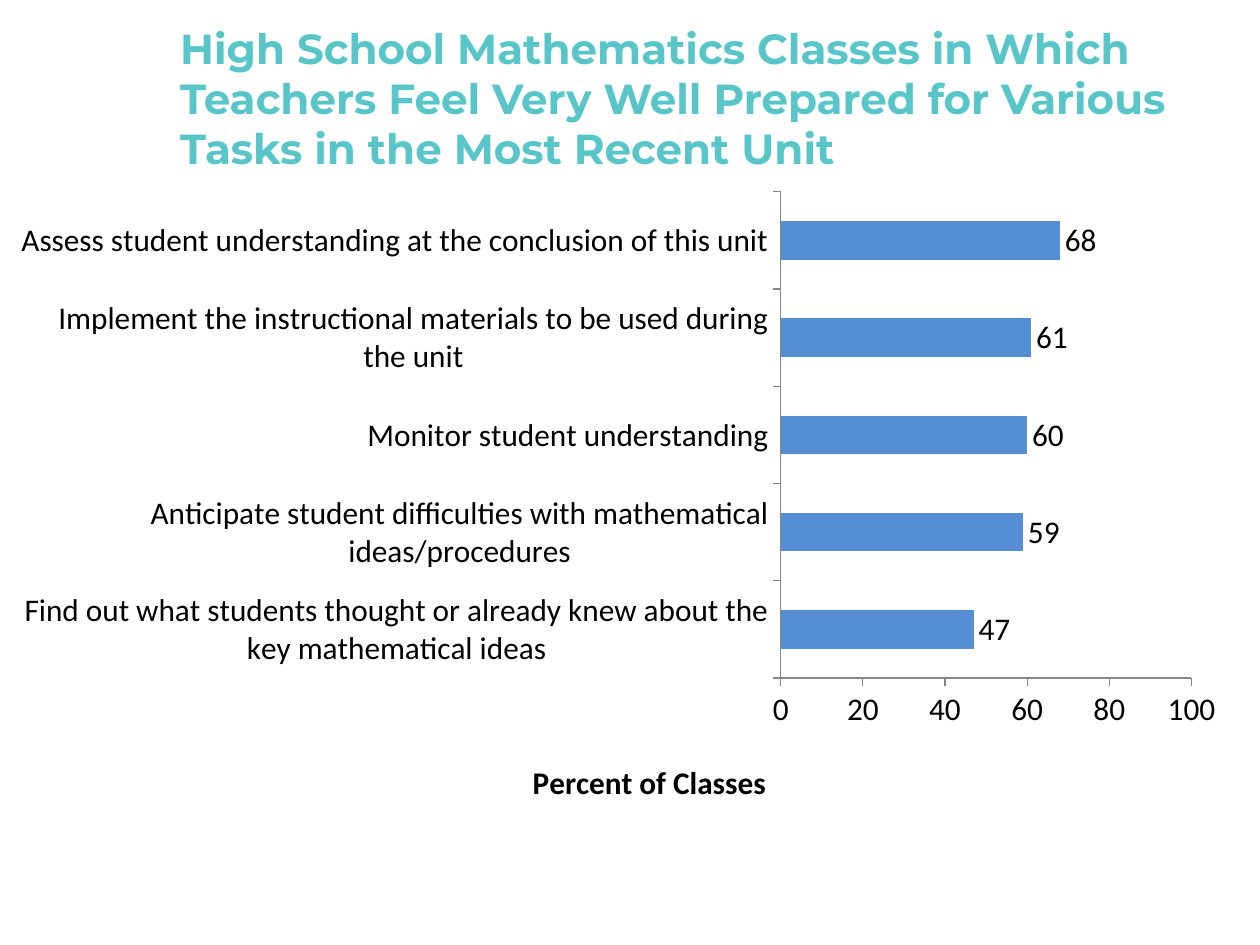
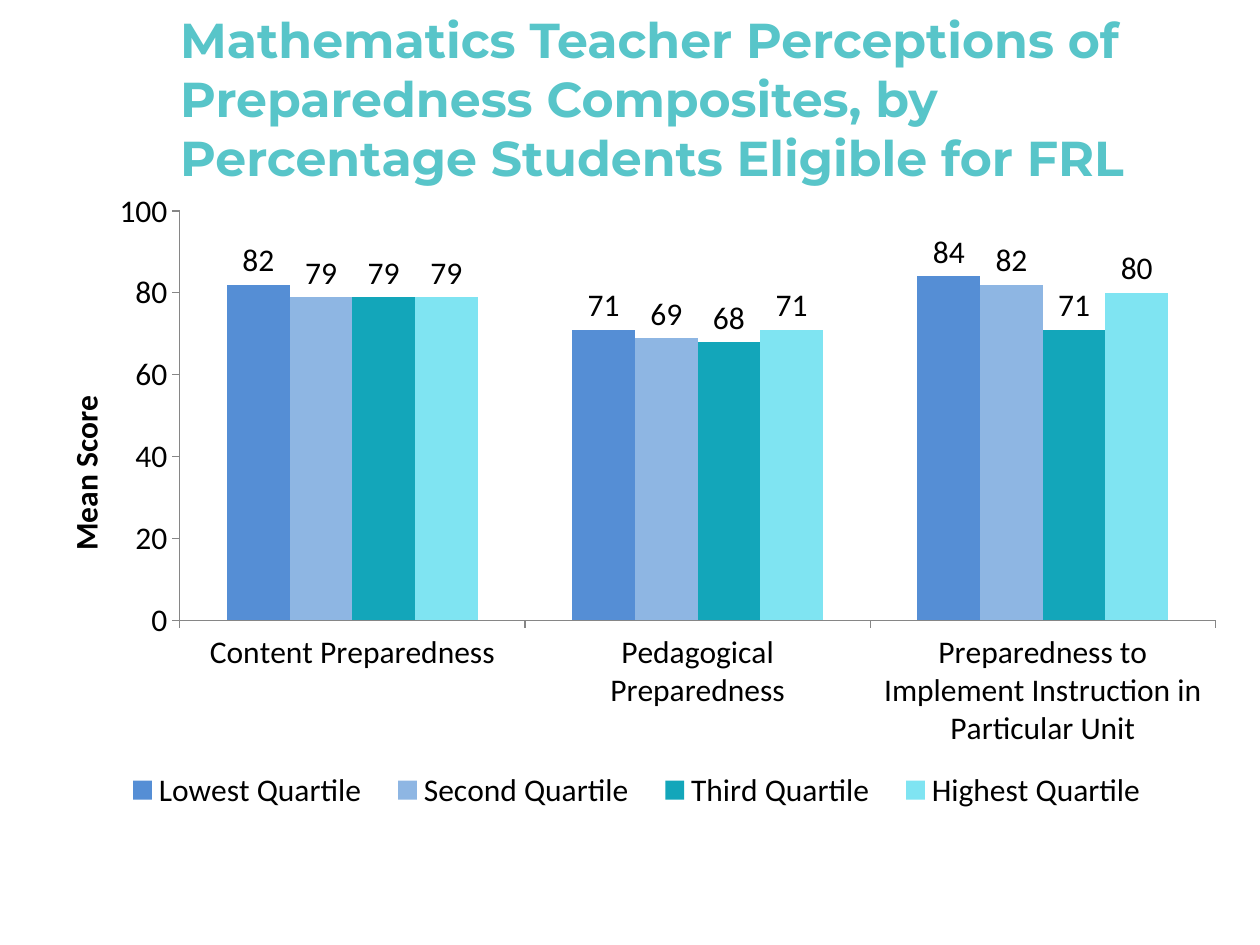
from lxml import etree
from pptx import Presentation
from pptx.chart.data import CategoryChartData
from pptx.dml.color import RGBColor
from pptx.enum.chart import XL_CHART_TYPE, XL_LABEL_POSITION, XL_LEGEND_POSITION, XL_TICK_MARK
from pptx.enum.text import MSO_ANCHOR, MSO_AUTO_SIZE, PP_ALIGN
from pptx.oxml.ns import qn
from pptx.util import Inches, Pt

BAR = XL_CHART_TYPE.BAR_CLUSTERED
COLUMN = XL_CHART_TYPE.COLUMN_CLUSTERED
OUTSIDE = XL_TICK_MARK.OUTSIDE
OUTSIDE_END = XL_LABEL_POSITION.OUTSIDE_END
BOTTOM = XL_LEGEND_POSITION.BOTTOM

TEAL = RGBColor(0x58, 0xC5, 0xC9)
BLACK = RGBColor(0, 0, 0)
GRAY = RGBColor(0x86, 0x86, 0x86)
SERIES_COLORS = [RGBColor(0x55, 0x8E, 0xD5), RGBColor(0x8E, 0xB6, 0xE3),
                 RGBColor(0x13, 0xA6, 0xBA), RGBColor(0x7F, 0xE4, 0xF2)]
TITLE_FONT, CHART_FONT = "Montserrat", "Calibri"
TITLE_BOX = [Inches(n) for n in (1.33, 0.3, 8.17, 0.95)]
CHART_BOX = [Inches(n) for n in (0.17, 1.42, 9.67, 5.08)]

# Content; plot, axis title and legend places are fractions of the chart
PAGES = [
    {
        "title": "High School Mathematics Classes in Which Teachers Feel Very Well "
                 "Prepared for Various Tasks in the Most Recent Unit",
        "title_size": 24,
        "type": BAR,
        "axis_title": "Percent of Classes",
        "categories": [
            "Find out what students thought or already knew about the key mathematical ideas",
            "Anticipate student difficulties with mathematical ideas/procedures",
            "Monitor student understanding",
            "Implement the instructional materials to be used during the unit",
            "Assess student understanding at the conclusion of this unit",
        ],
        "series": {"Series 1": [47, 59, 60, 61, 68]},
        "plot_place": (0.62, 0.02, 0.34, 0.76),
        "axis_title_place": (0.41, 0.9),
    },
    {
        "title": "Mathematics Teacher Perceptions of Preparedness Composites, by "
                 "Percentage Students Eligible for FRL",
        "title_size": 28,
        "type": COLUMN,
        "axis_title": "Mean Score",
        "categories": [
            "Content Preparedness",
            "Pedagogical Preparedness",
            "Preparedness to Implement Instruction in Particular Unit",
        ],
        "series": {
            "Lowest Quartile": [82, 71, 84],
            "Second Quartile": [79, 69, 82],
            "Third Quartile": [79, 68, 71],
            "Highest Quartile": [79, 71, 80],
        },
        "plot_place": (0.13, 0.05, 0.85, 0.64),
        "axis_title_place": (0.03, 0.33),
        "legend_place": (0.07, 0.92, 0.87, 0.07),
    },
]


def place_part(part, index, place, inner=False):
    """Give a chart part a manual layout as its child number index."""
    for old in part.findall(qn("c:layout")):
        part.remove(old)
    layout = etree.Element(qn("c:layout"))
    part.insert(index, layout)
    manual = etree.SubElement(layout, qn("c:manualLayout"))
    settings = [("layoutTarget", "inner")] if inner else []
    settings += [("xMode", "edge"), ("yMode", "edge")]
    settings += zip("xywh", place)
    for name, value in settings:
        etree.SubElement(manual, qn("c:" + name)).set("val", str(value))


def style_font(font, size, name, color, bold=False):
    font.size, font.name, font.bold = Pt(size), name, bold
    font.color.rgb = color


def add_title(page, text, size):
    title = page.shapes.title
    title.left, title.top, title.width, title.height = TITLE_BOX
    frame = title.text_frame
    frame.text = text
    frame.word_wrap = True
    frame.auto_size = MSO_AUTO_SIZE.NONE
    frame.vertical_anchor = MSO_ANCHOR.MIDDLE
    para = frame.paragraphs[0]
    para.alignment = PP_ALIGN.LEFT
    style_font(para.font, size, TITLE_FONT, TEAL, bold=True)


def add_chart(page, content):
    data = CategoryChartData(number_format="0")
    data.categories = content["categories"]
    for name, values in content["series"].items():
        data.add_series(name, values)
    chart = page.shapes.add_chart(content["type"], *CHART_BOX, data).chart
    chart.has_title = False
    style_font(chart.font, 18, CHART_FONT, BLACK)

    # Axes
    for axis in (chart.category_axis, chart.value_axis):
        axis.has_major_gridlines = False
        axis.major_tick_mark = OUTSIDE
        axis.format.line.color.rgb = GRAY
        axis.format.line.width = Pt(0.75)
    scale = chart.value_axis
    scale.minimum_scale, scale.maximum_scale, scale.major_unit = 0, 100, 20
    scale.axis_title.text_frame.text = content["axis_title"]
    para = scale.axis_title.text_frame.paragraphs[0]
    style_font(para.font, 18, CHART_FONT, BLACK, bold=True)
    place_part(scale.axis_title._element, 1, content["axis_title_place"])

    # Bars and their values
    plot = chart.plots[0]
    plot.gap_width, plot.overlap = 151, 0
    plot.vary_by_categories = False
    for series, color in zip(plot.series, SERIES_COLORS):
        series.format.fill.solid()
        series.format.fill.fore_color.rgb = color
        labels = series.data_labels
        labels.show_value = True
        labels.position = OUTSIDE_END
        style_font(labels.font, 18, CHART_FONT, BLACK)
    place_part(chart._chartSpace.chart.plotArea, 0, content["plot_place"], inner=True)

    # Legend
    chart.has_legend = "legend_place" in content
    if chart.has_legend:
        chart.legend.position = BOTTOM
        chart.legend.include_in_layout = False
        place_part(chart.legend._element, 1, content["legend_place"])


def main():
    deck = Presentation()
    deck.slide_width, deck.slide_height = Inches(10), Inches(7.5)
    title_only = deck.slide_layouts[5]
    for content in PAGES:
        page = deck.slides.add_slide(title_only)
        add_title(page, content["title"], content["title_size"])
        add_chart(page, content)
    deck.save("out.pptx")


if __name__ == "__main__":
    main()
